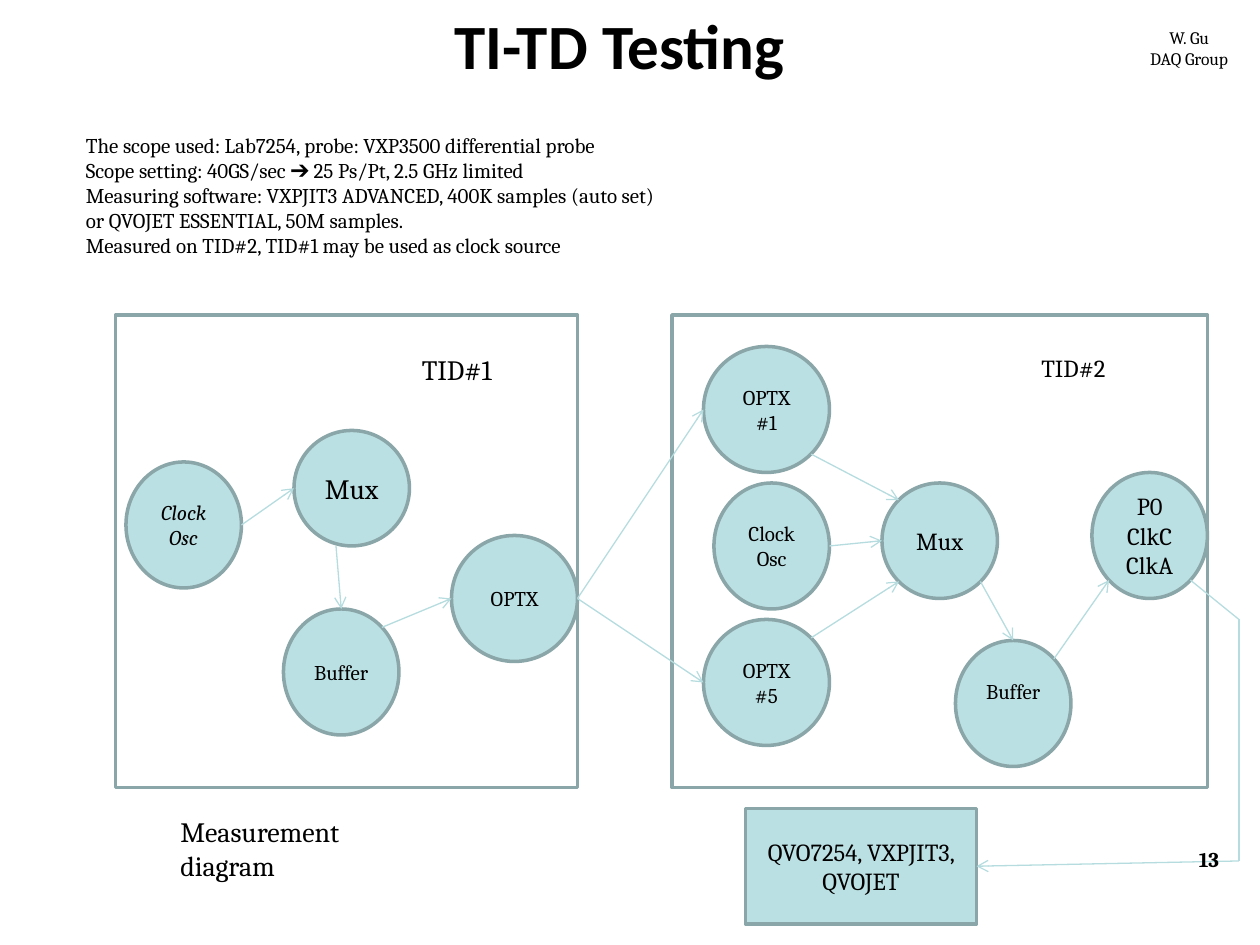
"""Build the TI-TD testing slide with its measurement diagram."""
from lxml import etree
from pptx import Presentation
from pptx.dml.color import RGBColor
from pptx.enum.shapes import MSO_CONNECTOR, MSO_SHAPE
from pptx.enum.text import MSO_ANCHOR, PP_ALIGN
from pptx.oxml.ns import qn
from pptx.util import Pt

PX = 9525
RECT, OVAL = MSO_SHAPE.RECTANGLE, MSO_SHAPE.OVAL
STRAIGHT = MSO_CONNECTOR.STRAIGHT
MIDDLE = MSO_ANCHOR.MIDDLE
LEFT, CENTER = PP_ALIGN.LEFT, PP_ALIGN.CENTER
FILL, EDGE, ARROW, INK = "BBE0E3", "8AA6A8", "B6DCDF", "000000"

SETUP = [
    "The scope used: Lab7254, probe: VXP3500 differential probe",
    "Scope setting: 40GS/sec ➔ 25 Ps/Pt, 2.5 GHz limited",
    "Measuring software: VXPJIT3 ADVANCED, 400K samples (auto set)",
    "or QVOJET ESSENTIAL, 50M samples.",
    "Measured on TID#2, TID#1 may be used as clock source",
]
BOARDS = [(88, 240, 352, 360), (512, 240, 408, 360)]
NODES = [
    ((96, 352, 88, 96), ["Clock Osc"], {"italic": True}),
    ((224, 328, 88, 88), ["Mux"], {"size": Pt(16)}),
    ((216, 464, 88, 96), ["Buffer"], {}),
    ((344, 408, 96, 96), ["OPTX"], {}),
    ((536, 264, 96, 96), ["OPTX #1"], {}),
    ((536, 472, 96, 96), ["OPTX #5"], {}),
    ((544, 368, 88, 96), ["Clock Osc"], {}),
    ((672, 368, 88, 88), ["Mux"], {"size": Pt(14)}),
    ((832, 360, 88, 96), ["P0", "ClkC", "ClkA"], {"size": Pt(14)}),
]
SECOND_BUFFER = (728, 488, 88, 96)
ARROWS = [
    (184, 400, 224, 372),
    (256, 416, 260, 464),
    (291, 478, 344, 456),
    (440, 456, 536, 312),
    (440, 456, 536, 520),
    (618, 346, 685, 381),
    (632, 416, 672, 412),
    (618, 486, 685, 443),
    (747, 443, 772, 488),
    (803, 502, 845, 442),
]
SCOPE = (568, 616, 176, 88)
SCOPE_ROUTE = [(907, 442), (944, 472), (944, 656), (744, 660)]
LABELS = [
    ((312, 264, 77, 35), ["TID#1"], False, LEFT, {"size": Pt(16)}),
    ((784, 264, 69, 33), ["TID#2"], False, LEFT, {"size": Pt(14)}),
    ((128, 616, 213, 62), ["Measurement diagram"], True, LEFT, {"size": Pt(16)}),
    ((128, 0, 688, 68), ["TI-TD Testing"], True, CENTER,
     {"name": "Calibri", "size": Pt(36), "bold": True}),
    ((863, 16, 86, 42), ["W. Gu", "DAQ Group"], False, CENTER, {"size": Pt(10)}),
    ((904, 640, 38, 29), ["13"], False, LEFT, {"bold": True}),
]


def color(value):
    """Turn a hex string into a colour."""
    return RGBColor.from_string(value)


def px(*values):
    """Turn pixel lengths into EMU."""
    return [value * PX for value in values]


def write(tf, lines, align, font):
    """Write one paragraph per line with a shared format."""
    style = {"name": "Cambria", "size": Pt(12), **font}
    for i, line in enumerate(lines):
        p = tf.paragraphs[0] if i == 0 else tf.add_paragraph()
        p.alignment = align
        r = p.add_run()
        r.text = line
        r.font.color.rgb = color(INK)
        for key, value in style.items():
            setattr(r.font, key, value)


def add_label(s, box, lines, wrap, align, font):
    """Add a text box."""
    tf = s.shapes.add_textbox(*px(*box)).text_frame
    tf.word_wrap = wrap
    write(tf, lines, align, font)


def add_block(s, kind, box, fill=FILL):
    """Add an outlined shape, open when it has no fill."""
    sp = s.shapes.add_shape(kind, *px(*box))
    sp.shadow.inherit = False
    if fill:
        sp.fill.solid()
        sp.fill.fore_color.rgb = color(fill)
    else:
        sp.fill.background()
    sp.line.color.rgb = color(EDGE)
    sp.line.width = Pt(2)
    return sp


def add_node(s, kind, box, lines, font):
    """Add a filled shape with centred text and return its text frame."""
    tf = add_block(s, kind, box).text_frame
    tf.word_wrap = True
    tf.vertical_anchor = MIDDLE
    write(tf, lines, CENTER, font)
    return tf


def add_line(s, ends, arrow=True):
    """Add a straight connector with an optional arrowhead."""
    cxn = s.shapes.add_connector(STRAIGHT, *px(*ends))
    cxn.line.color.rgb = color(ARROW)
    cxn.line.width = Pt(0.75)
    if arrow:
        etree.SubElement(cxn.line._get_or_add_ln(), qn("a:tailEnd"), type="arrow")
    etree.SubElement(cxn._element.spPr, qn("a:effectLst"))


def main():
    """Build and save the slide."""
    prs = Presentation()
    prs.slide_width, prs.slide_height = px(960, 720)
    s = prs.slides.add_slide(prs.slide_layouts[6])
    add_label(s, (56, 96, 671, 107), SETUP, True, LEFT, {})
    for box in BOARDS:
        add_block(s, RECT, box, fill=None)
    for box, lines, font in NODES:
        add_node(s, OVAL, box, lines, font)
    tf = add_node(s, OVAL, SECOND_BUFFER, ["Buffer"], {})
    tf.margin_bottom = 24 * PX
    for ends in ARROWS:
        add_line(s, ends)
    add_node(s, RECT, SCOPE, ["QVO7254, VXPJIT3, QVOJET"], {"size": Pt(14)})
    for start, end in zip(SCOPE_ROUTE, SCOPE_ROUTE[1:]):
        add_line(s, start + end, arrow=end == SCOPE_ROUTE[-1])
    for label in LABELS:
        add_label(s, *label)
    prs.save("out.pptx")


if __name__ == "__main__":
    main()
